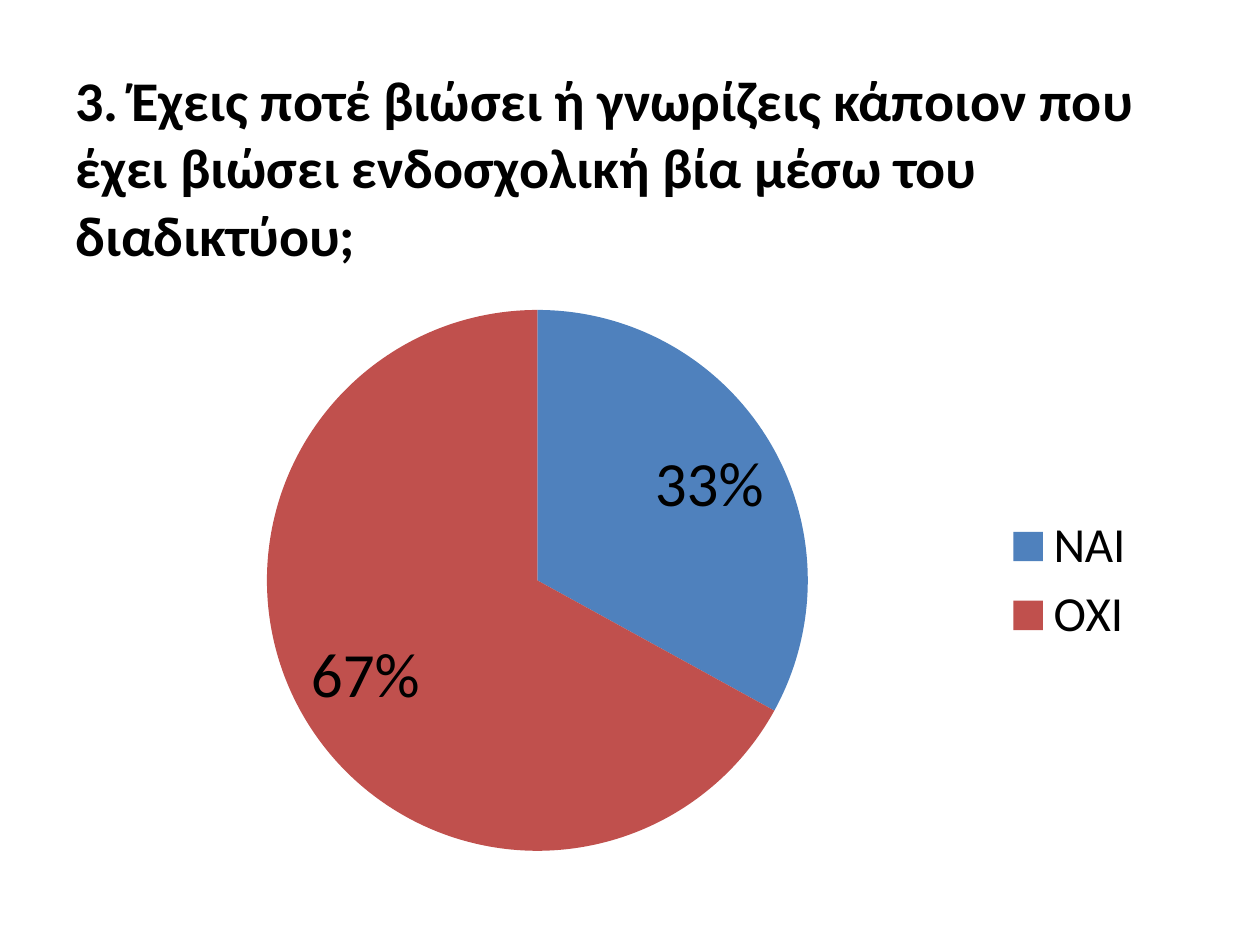
from dataclasses import dataclass

from lxml.etree import SubElement
from pptx import Presentation
from pptx.chart.data import CategoryChartData
from pptx.dml.color import RGBColor
from pptx.enum.chart import XL_CHART_TYPE, XL_LABEL_POSITION, XL_LEGEND_POSITION
from pptx.enum.text import MSO_ANCHOR, MSO_AUTO_SIZE, PP_ALIGN
from pptx.oxml.ns import qn
from pptx.util import Inches, Pt


@dataclass(frozen=True)
class Theme:
    face: str = "Calibri"
    ink: str = "000000"
    fills: tuple = ("4F81BD", "C0504D")
    head: int = 32
    base: int = 10
    key: int = 28
    label: int = 36


THEME = Theme()


def px(size):
    return round(size * Inches(1) / 126)


def style(font, size, bold=False):
    font.name = THEME.face
    font.size = Pt(size)
    font.bold = bold
    font.color.rgb = RGBColor.from_string(THEME.ink)


def add_title(slide, box, text):
    title = slide.shapes.title
    title.left, title.top, title.width, title.height = map(px, box)
    frame = title.text_frame
    frame.word_wrap = True
    frame.auto_size = MSO_AUTO_SIZE.NONE
    frame.vertical_anchor = MSO_ANCHOR.MIDDLE
    para = frame.paragraphs[0]
    para.alignment = PP_ALIGN.LEFT
    run = para.add_run()
    run.text = text
    style(run.font, THEME.head, True)


def place_plot(chart, box, inner):
    area = chart.plots[0]._element.getparent()
    old = area.find(qn("c:layout"))
    if old is not None:
        area.remove(old)
    layout = SubElement(area, qn("c:layout"))
    area.insert(0, layout)
    manual = SubElement(layout, qn("c:manualLayout"))
    left, top, wide, high = inner
    parts = {
        "layoutTarget": "inner",
        "xMode": "edge",
        "yMode": "edge",
        "x": left / box[2],
        "y": top / box[3],
        "w": wide / box[2],
        "h": high / box[3],
    }
    for name, value in parts.items():
        SubElement(manual, qn(f"c:{name}")).set("val", str(value))


def add_pie(slide, box, names, values):
    data = CategoryChartData(number_format="0%")
    data.categories = names
    data.add_series("Series 1", values)
    frame = slide.shapes.add_chart(XL_CHART_TYPE.PIE, *map(px, box), data)
    chart = frame.chart
    chart.has_title = False
    style(chart.font, THEME.base)
    chart.has_legend = True
    chart.legend.position = XL_LEGEND_POSITION.RIGHT
    chart.legend.include_in_layout = False
    style(chart.legend.font, THEME.key)
    plot = chart.plots[0]
    plot.vary_by_categories = True
    for index, fill in enumerate(THEME.fills):
        look = plot.series[0].points[index].format
        look.fill.solid()
        look.fill.fore_color.rgb = RGBColor.from_string(fill)
        look.line.fill.background()
    labels = plot.series[0].data_labels
    labels.show_value = True
    labels.number_format = "0%"
    labels.number_format_is_linked = False
    labels.position = XL_LABEL_POSITION.INSIDE_END
    style(labels.font, THEME.label)
    place_plot(chart, box, (189, 34, 541, 541))


def main():
    deck = Presentation()
    deck.slide_width, deck.slide_height = px(1260), px(945)
    slide = deck.slides.add_slide(deck.slide_layouts[5])
    add_title(
        slide,
        (63, 38, 1134, 257),
        "3. Έχεις ποτέ βιώσει ή γνωρίζεις κάποιον που έχει βιώσει "
        "ενδοσχολική βία μέσω του διαδικτύου;",
    )
    add_pie(slide, (78, 276, 1074, 610), ("ΝΑΙ", "ΌΧΙ"), (0.33, 0.67))
    deck.save("out.pptx")


if __name__ == "__main__":
    main()
